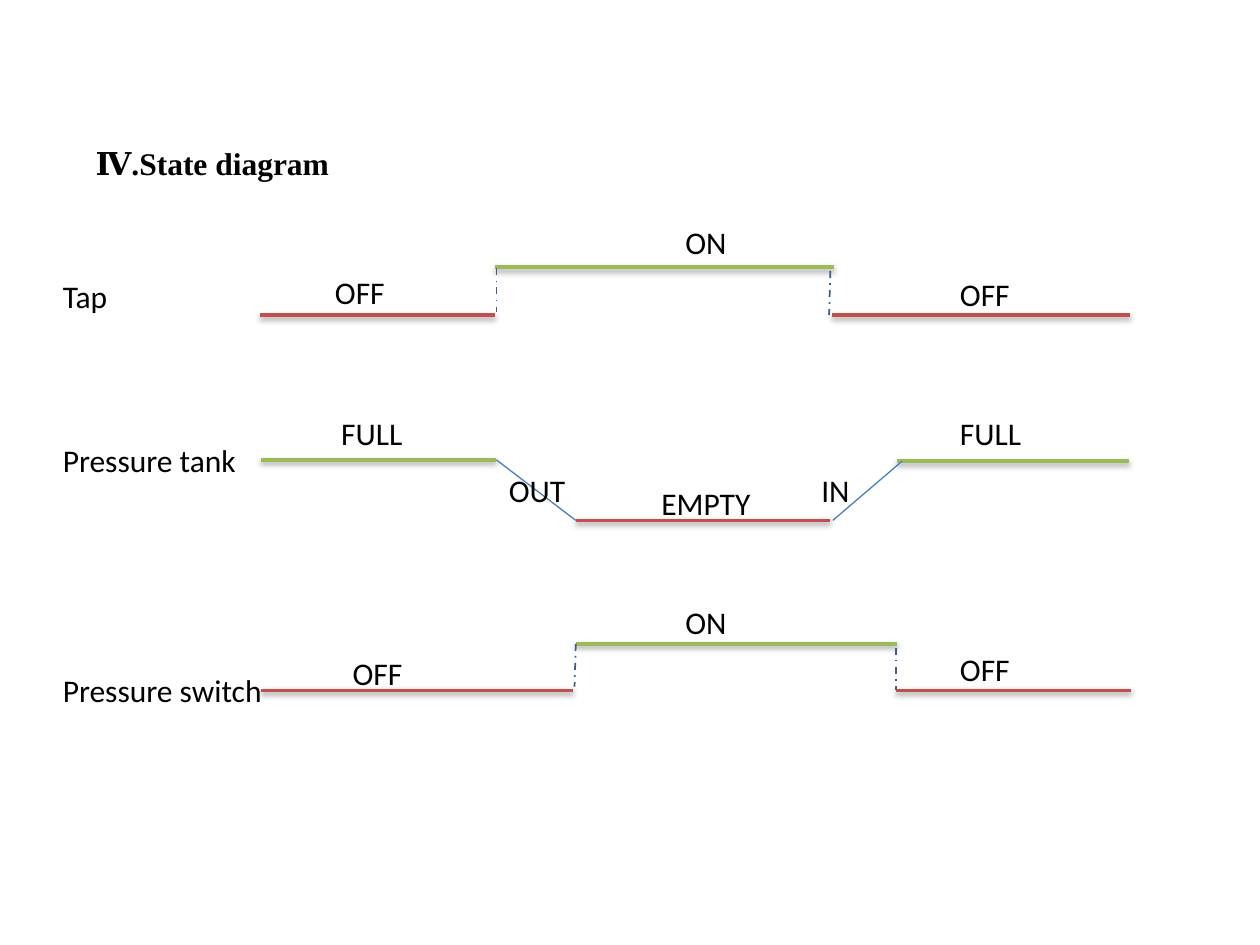
from lxml.etree import SubElement
from pptx import Presentation
from pptx.dml.color import RGBColor
from pptx.enum.dml import MSO_LINE
from pptx.enum.shapes import MSO_CONNECTOR
from pptx.enum.text import MSO_ANCHOR, MSO_AUTO_SIZE, PP_ALIGN
from pptx.oxml.ns import qn
from pptx.util import Inches, Pt

RED, GREEN, BLUE, NAVY = "C0504D", "9BBB59", "4B7EBC", "3A5F8C"
TITLE = ("Ⅳ.State diagram", 0.66, 1.09, 2.78)
WIDTHS = {"Tap": 0.57, "Pressure tank": 1.6, "Pressure switch": 1.8,
          "ON": 0.55, "OFF": 0.62, "FULL": 0.71, "OUT": 0.67,
          "IN": 0.45, "EMPTY": 0.93}
SIGNALS = [
    {"levels": [(2.06, 3.93, 2.5, RED), (3.93, 6.62, 2.12, GREEN),
                (6.6, 8.97, 2.5, RED)],
     "jumps": [(3.94, 2.13, 3.94, 2.48), (6.59, 2.15, 6.58, 2.5)],
     "ramps": [],
     "labels": [("Tap", 0.4, 2.15), ("OFF", 2.56, 2.12),
                ("ON", 5.34, 1.72), ("OFF", 7.52, 2.13)]},
    {"levels": [(2.07, 3.94, 3.65, GREEN), (4.57, 6.59, 4.13, RED),
                (7.12, 8.96, 3.66, GREEN)],
     "jumps": [],
     "ramps": [(3.94, 3.65, 4.57, 4.13), (6.61, 4.13, 7.16, 3.66)],
     "labels": [("Pressure tank", 0.4, 3.45), ("FULL", 2.61, 3.24),
                ("OUT", 3.94, 3.69), ("EMPTY", 5.15, 3.79),
                ("IN", 6.42, 3.69), ("FULL", 7.52, 3.24)]},
    {"levels": [(2.07, 4.55, 5.48, RED), (4.57, 7.12, 5.11, GREEN),
                (7.11, 8.98, 5.48, RED)],
     "jumps": [(4.57, 5.11, 4.56, 5.45), (7.11, 5.14, 7.11, 5.48)],
     "ramps": [],
     "labels": [("Pressure switch", 0.4, 5.28), ("OFF", 2.7, 5.14),
                ("ON", 5.34, 4.74), ("OFF", 7.52, 5.11)]},
]


def tint(target, color):
    target.rgb = RGBColor.from_string(color)


def draw(slide, ends, color, width, dash=None, shade=False):
    line = slide.shapes.add_connector(MSO_CONNECTOR.STRAIGHT, *map(Inches, ends))
    tint(line.line.color, color)
    line.line.width = Pt(width)
    if dash:
        line.line.dash_style = dash
    effects = SubElement(line._element.spPr, qn("a:effectLst"))
    if shade:
        shadow = SubElement(effects, qn("a:outerShdw"), blurRad="40000",
                            dist="20000", dir="5400000", rotWithShape="0")
        black = SubElement(shadow, qn("a:srgbClr"), val="000000")
        SubElement(black, qn("a:alpha"), val="38000")


def write(box, text, face="Calibri", bold=False, wrap=False):
    frame = box.text_frame
    frame.text = text
    frame.word_wrap = wrap
    frame.auto_size = MSO_AUTO_SIZE.SHAPE_TO_FIT_TEXT
    frame.vertical_anchor = MSO_ANCHOR.TOP
    para = frame.paragraphs[0]
    para.alignment = PP_ALIGN.LEFT
    font = para.font
    font.name, font.size, font.bold = face, Pt(18), bold
    tint(font.color, "000000")


def main():
    """Build the state diagram slide."""
    deck = Presentation()
    deck.slide_width, deck.slide_height = Inches(10), Inches(7.5)
    slide = deck.slides.add_slide(deck.slide_layouts[5])
    text, left, top, width = TITLE
    title = slide.shapes.title
    title.left, title.top = Inches(left), Inches(top)
    title.width, title.height = Inches(width), Inches(0.4)
    write(title, text, "Times New Roman", True, True)
    for signal in SIGNALS:
        for start, end, level, color in signal["levels"]:
            draw(slide, (start, level, end, level), color, 2, shade=True)
        for ends in signal["jumps"]:
            draw(slide, ends, NAVY, 1, MSO_LINE.DASH_DOT)
        for ends in signal["ramps"]:
            draw(slide, ends, BLUE, 0.75)
        for text, left, top in signal["labels"]:
            area = map(Inches, (left, top, WIDTHS[text], 0.4))
            write(slide.shapes.add_textbox(*area), text)
    deck.save("out.pptx")


if __name__ == "__main__":
    main()
